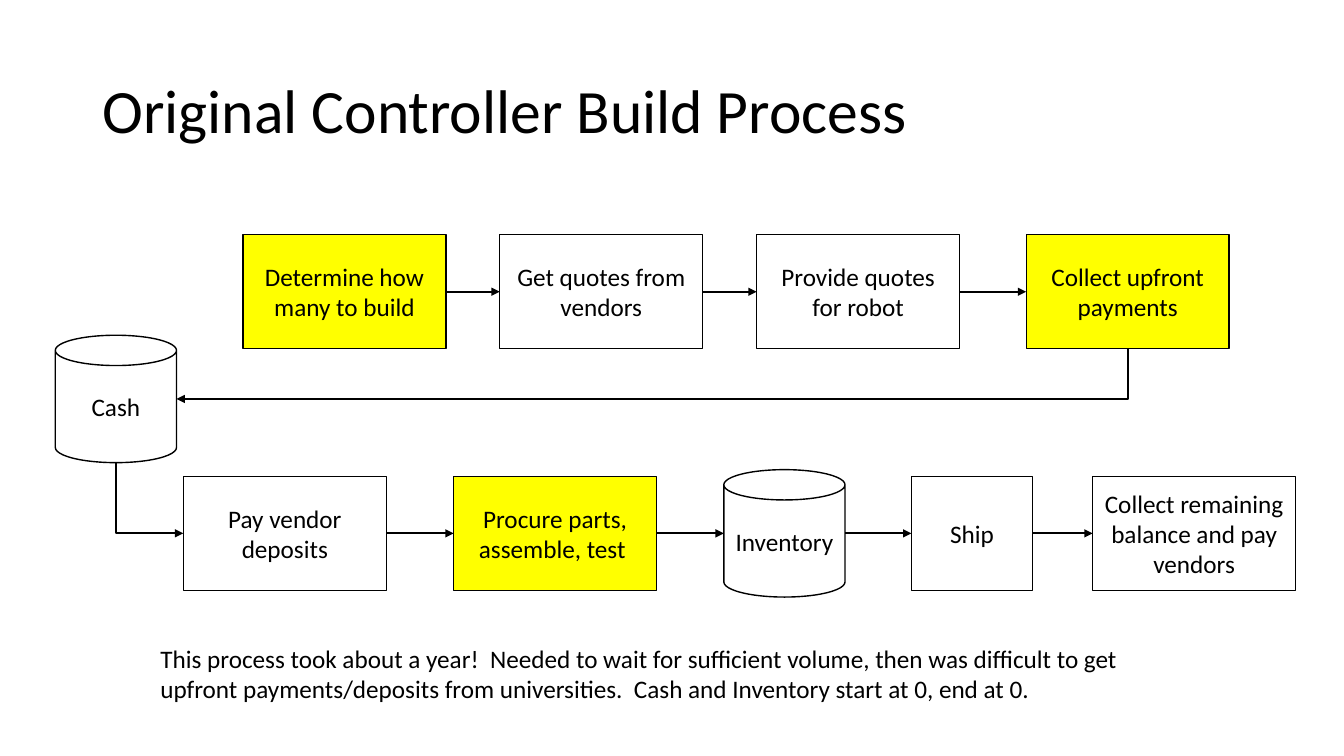
from dataclasses import dataclass

from lxml import etree
from pptx import Presentation
from pptx.dml.color import RGBColor
from pptx.enum import shapes, text
from pptx.oxml.ns import qn
from pptx.util import Pt


@dataclass(frozen=True)
class Theme:
    font: str = "Calibri"
    ink: RGBColor = RGBColor(0, 0, 0)
    plain: RGBColor = RGBColor(255, 255, 255)
    highlight: RGBColor = RGBColor(255, 255, 0)
    title_size: float = 44
    body_size: float = 18
    outline: float = 1
    arrow: float = 1.25


THEME = Theme()
RECT = shapes.MSO_SHAPE.RECTANGLE
CAN = shapes.MSO_SHAPE.CAN
WIDE, NARROW = 145, 86.6
RIGHT, LEFT = 3, 1  # rectangle connection sites


@dataclass(frozen=True)
class Step:
    label: str
    left: float
    middle: float
    width: float = WIDE
    height: float = 81.4
    kind: shapes.MSO_SHAPE = RECT
    highlight: bool = False

    @property
    def right(self) -> float:
        return self.left + self.width

    @property
    def center(self) -> float:
        return self.left + self.width / 2

    @property
    def top(self) -> float:
        return self.middle - self.height / 2

    @property
    def bottom(self) -> float:
        return self.middle + self.height / 2


def store(label: str, left: float, middle: float) -> Step:
    return Step(label, left, middle, NARROW, 91, CAN)


# Process content
QUOTING_Y, CASH_Y, BUILD_Y = 208.4, 285, 381
QUOTING = [
    Step("Determine how many to build", 173.5, QUOTING_Y, highlight=True),
    Step("Get quotes from vendors", 357, QUOTING_Y),
    Step("Provide quotes for robot", 540.5, QUOTING_Y),
    Step("Collect upfront payments", 733, QUOTING_Y, highlight=True),
]
CASH = store("Cash", 39.5, CASH_Y)
BUILD = [
    Step("Pay vendor deposits", 131, BUILD_Y),
    Step("Procure parts, assemble, test ", 324, BUILD_Y, highlight=True),
    store("Inventory", 517, BUILD_Y),
    Step("Ship", 651, BUILD_Y, NARROW),
    Step("Collect remaining balance and pay vendors", 780.5, BUILD_Y),
]
NOTE = (
    "This process took about a year!  Needed to wait for sufficient volume, "
    "then was difficult to get upfront payments/deposits from universities.  "
    "Cash and Inventory start at 0, end at 0."
)


def write(tf, content: str, *, size: float = THEME.body_size,
          align=text.PP_ALIGN.LEFT, anchor=text.MSO_ANCHOR.MIDDLE,
          fit=text.MSO_AUTO_SIZE.NONE, spacing: float = 1.0) -> None:
    tf.word_wrap = True
    tf.auto_size = fit
    tf.vertical_anchor = anchor
    p = tf.paragraphs[0]
    p.alignment = align
    p.line_spacing = spacing
    r = p.add_run()
    r.text = content
    r.font.name = THEME.font
    r.font.size = Pt(size)
    r.font.color.rgb = THEME.ink


def draw_step(s, step: Step):
    sp = s.shapes.add_shape(step.kind, Pt(step.left), Pt(step.top),
                            Pt(step.width), Pt(step.height))
    sp.shadow.inherit = False
    sp.fill.solid()
    sp.fill.fore_color.rgb = THEME.highlight if step.highlight else THEME.plain
    sp.line.color.rgb = THEME.ink
    sp.line.width = Pt(THEME.outline)
    write(sp.text_frame, step.label, align=text.PP_ALIGN.CENTER)
    return sp


def draw_arrow(s, kind, x1: float, y1: float, x2: float, y2: float):
    line = s.shapes.add_connector(kind, Pt(x1), Pt(y1), Pt(x2), Pt(y2))
    line.line.color.rgb = THEME.ink
    line.line.width = Pt(THEME.arrow)
    sp_pr = line._element.spPr
    etree.SubElement(sp_pr.find(qn("a:ln")), qn("a:tailEnd"), type="triangle")
    etree.SubElement(sp_pr, qn("a:effectLst"))
    return line


def draw_bend(s, x1: float, y1: float, x2: float, y2: float) -> None:
    """Draw an arrow that runs down first, then sideways: a quarter turn."""
    cx, cy = (x1 + x2) / 2, (y1 + y2) / 2
    dx, dy = (x2 - x1) / 2, (y2 - y1) / 2
    line = draw_arrow(s, shapes.MSO_CONNECTOR.ELBOW,
                      cx - dy, cy + dx, cx + dy, cy - dx)
    sp_pr = line._element.spPr
    sp_pr.find(qn("a:prstGeom")).set("prst", "bentConnector2")
    sp_pr.find(qn("a:xfrm")).set("rot", str(90 * 60000))


def draw_row(s, steps: list[Step]) -> None:
    drawn = [(step, draw_step(s, step)) for step in steps]
    for (a, a_sp), (b, b_sp) in zip(drawn, drawn[1:]):
        line = draw_arrow(s, shapes.MSO_CONNECTOR.STRAIGHT,
                          a.right, a.middle, b.left, b.middle)
        if a.kind == RECT:
            line.begin_connect(a_sp, RIGHT)
        if b.kind == RECT:
            line.end_connect(b_sp, LEFT)


def main() -> None:
    prs = Presentation()
    prs.slide_width, prs.slide_height = Pt(960), Pt(540)
    s = prs.slides.add_slide(prs.slide_layouts[5])

    # Title
    title = s.shapes.title
    title.left, title.top = Pt(66), Pt(28.75)
    title.width, title.height = Pt(828), Pt(104.4)
    write(title.text_frame, "Original Controller Build Process",
          size=THEME.title_size, spacing=0.9)

    # Process rows and the cash store between them
    draw_row(s, QUOTING)
    draw_step(s, CASH)
    draw_row(s, BUILD)
    payment, deposit = QUOTING[-1], BUILD[0]
    draw_bend(s, payment.center, payment.bottom, CASH.right, CASH.middle)
    draw_bend(s, CASH.center, CASH.bottom, deposit.left, deposit.middle)

    # Closing note
    note = s.shapes.add_textbox(Pt(107.5), Pt(456), Pt(722), Pt(51))
    write(note.text_frame, NOTE, anchor=text.MSO_ANCHOR.TOP,
          fit=text.MSO_AUTO_SIZE.SHAPE_TO_FIT_TEXT)

    prs.save("out.pptx")


if __name__ == "__main__":
    main()
